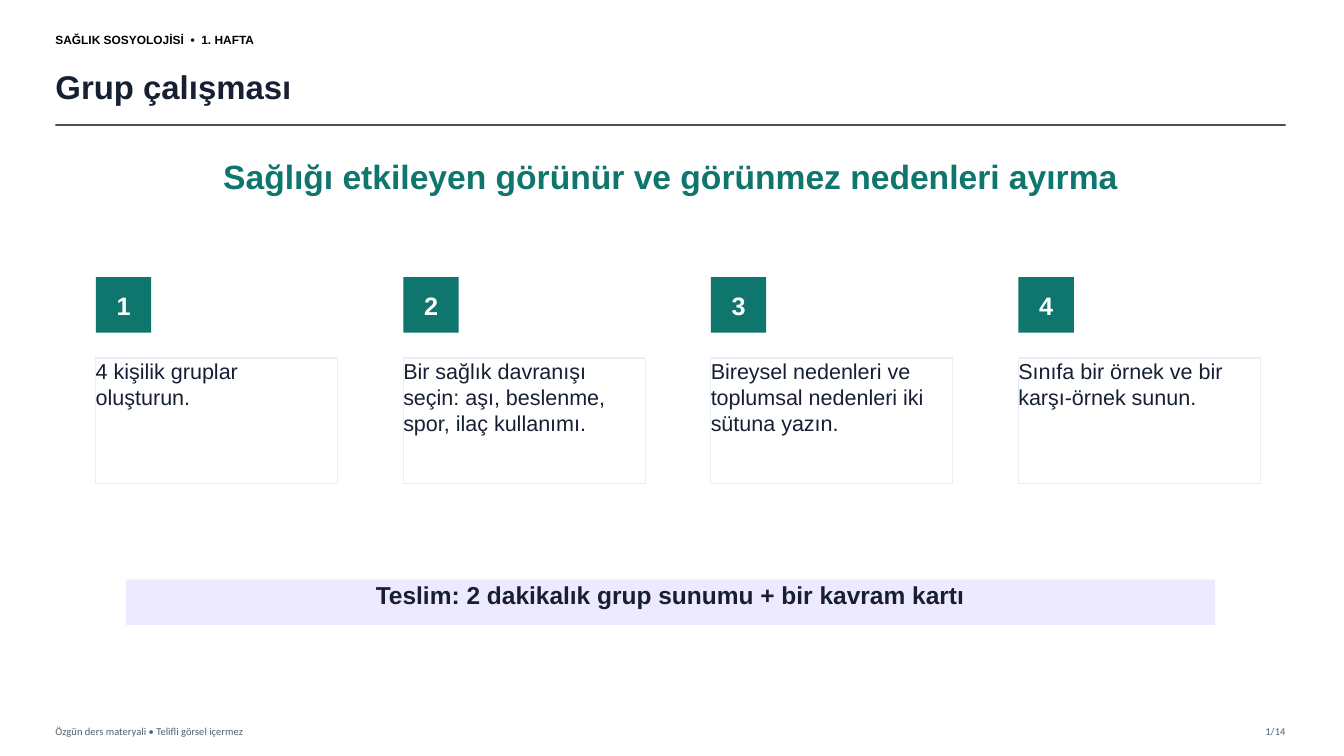
from lxml import etree
from pptx import Presentation
from pptx import util as u
from pptx.dml.color import RGBColor
from pptx.enum import shapes, text
from pptx.oxml import ns

COLORS = {
    "black": "000000",
    "ink": "172033",
    "teal": "0F766E",
    "white": "FFFFFF",
    "lavender": "EDE9FE",
    "border": "E8EEF5",
    "rule": "333333",
    "muted": "506070",
}
STEPS = [
    "4 kişilik gruplar oluşturun.",
    "Bir sağlık davranışı seçin: aşı, beslenme, spor, ilaç kullanımı.",
    "Bireysel nedenleri ve toplumsal nedenleri iki sütuna yazın.",
    "Sınıfa bir örnek ve bir karşı-örnek sunun.",
]
LEFT, CENTER, RIGHT = text.PP_ALIGN.LEFT, text.PP_ALIGN.CENTER, text.PP_ALIGN.RIGHT
TOP, MIDDLE = text.MSO_ANCHOR.TOP, text.MSO_ANCHOR.MIDDLE


class SlideBuilder:
    """Hold the slide style and add each kind of element."""

    def __init__(self, slide, font="Arial"):
        self.slide = slide
        self.font = font
        slide.background.fill.solid()
        slide.background.fill.fore_color.rgb = self.color("white")

    def color(self, name):
        return RGBColor.from_string(COLORS[name])

    def set_text(self, shape, words, size, color, bold=False, align=LEFT, anchor=TOP, font=None):
        frame = shape.text_frame
        frame.word_wrap = True
        frame.auto_size = text.MSO_AUTO_SIZE.NONE
        frame.vertical_anchor = anchor
        frame.margin_left = frame.margin_right = frame.margin_top = frame.margin_bottom = 0
        paragraph = frame.paragraphs[0]
        paragraph.alignment = align
        paragraph.line_spacing = 1.0
        paragraph.space_before = u.Pt(0)
        run = paragraph.add_run()
        run.text = words
        run.font.name = font or self.font
        run.font.size = u.Pt(size)
        run.font.bold = bold
        run.font.color.rgb = self.color(color)

    def title(self, box, words, size, color):
        shape = self.slide.shapes.title
        shape.left, shape.top, shape.width, shape.height = map(u.Inches, box)
        self.set_text(shape, words, size, color, bold=True, anchor=MIDDLE)

    def label(self, box, words, size, color, **style):
        shape = self.slide.shapes.add_textbox(*map(u.Inches, box))
        self.set_text(shape, words, size, color, **style)

    def panel(self, box, fill, words, size, color, border=None, **style):
        shape = self.slide.shapes.add_shape(shapes.MSO_SHAPE.RECTANGLE, *map(u.Inches, box))
        shape.shadow.inherit = False
        shape.fill.solid()
        shape.fill.fore_color.rgb = self.color(fill)
        if border:
            shape.line.color.rgb = self.color(border)
            shape.line.width = u.Pt(1)
        else:
            shape.line.fill.background()
        self.set_text(shape, words, size, color, **style)

    def rule(self, left, right, top, color, width, opacity):
        ends = map(u.Inches, (left, top, right, top))
        line = self.slide.shapes.add_connector(shapes.MSO_CONNECTOR.STRAIGHT, *ends)
        line.line.color.rgb = self.color(color)
        line.line.width = u.Pt(width)
        properties = line._element.spPr
        solid = properties.find(".//" + ns.qn("a:srgbClr"))
        etree.SubElement(solid, ns.qn("a:alpha"), val=str(opacity * 1000))
        etree.SubElement(properties, ns.qn("a:effectLst"))


def main():
    presentation = Presentation()
    presentation.slide_width = u.Inches(13.33)
    presentation.slide_height = u.Inches(7.5)
    builder = SlideBuilder(presentation.slides.add_slide(presentation.slide_layouts[5]))

    builder.label((0.55, 0.25, 3.6, 0.28), "SAĞLIK SOSYOLOJİSİ  •  1. HAFTA", 8.5, "black",
                  bold=True, anchor=MIDDLE)
    builder.title((0.55, 0.58, 11.95, 0.55), "Grup çalışması", 23.5, "ink")
    builder.rule(0.55, 12.75, 1.24, "rule", 1.2, 85)
    builder.label((0.75, 1.55, 11.8, 0.65),
                  "Sağlığı etkileyen görünür ve görünmez nedenleri ayırma", 24, "teal",
                  bold=True, align=CENTER)

    for index, step in enumerate(STEPS):
        left = 0.95 + 3.05 * index
        builder.panel((left, 2.75, 0.55, 0.55), "teal", str(index + 1), 18, "white",
                      bold=True, align=CENTER, anchor=MIDDLE)
        builder.panel((left, 3.55, 2.4, 1.25), "white", step, 15.4, "ink", border="border")

    builder.panel((1.25, 5.75, 10.8, 0.45), "lavender",
                  "Teslim: 2 dakikalık grup sunumu + bir kavram kartı", 17.5, "ink",
                  bold=True, align=CENTER)
    builder.label((0.55, 7.14, 6, 0.22), "Özgün ders materyali • Telifli görsel içermez",
                  7.5, "muted", anchor=MIDDLE, font="Calibri")
    builder.label((12.1, 7.14, 0.65, 0.22), "1/14", 7.5, "muted",
                  align=RIGHT, anchor=MIDDLE, font="Calibri")
    presentation.save("out.pptx")


if __name__ == "__main__":
    main()
